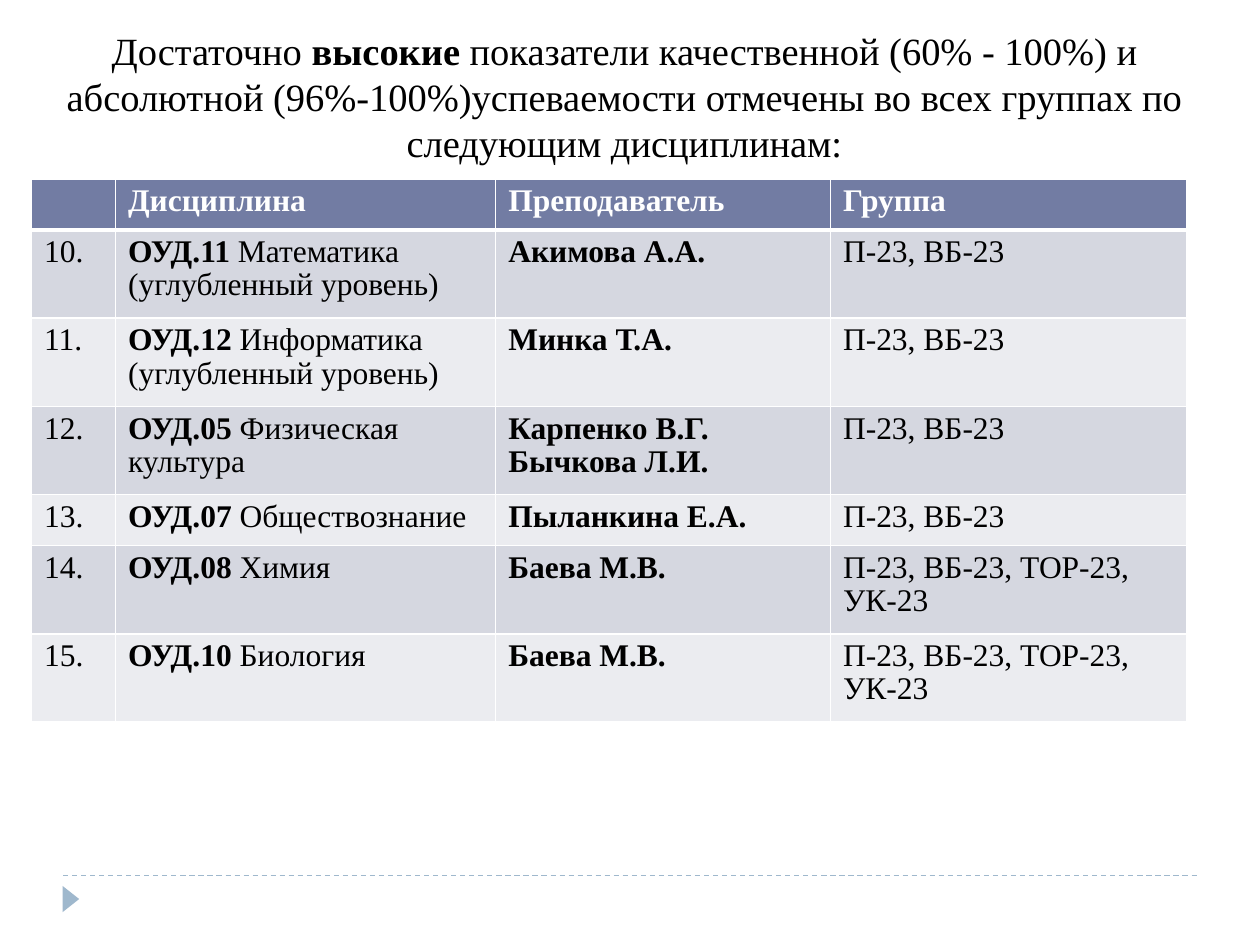
from lxml import etree
from pptx import Presentation
from pptx.dml.color import RGBColor
from pptx.enum.dml import MSO_LINE
from pptx.enum.shapes import MSO_CONNECTOR, MSO_SHAPE
from pptx.enum.text import MSO_ANCHOR, PP_ALIGN
from pptx.oxml.ns import qn
from pptx.util import Pt

CENTER = PP_ALIGN.CENTER
LEFT = PP_ALIGN.LEFT
TOP = MSO_ANCHOR.TOP
DASH = MSO_LINE.DASH
STRAIGHT = MSO_CONNECTOR.STRAIGHT
TRIANGLE = MSO_SHAPE.ISOSCELES_TRIANGLE

FONT = "Times New Roman"
COLORS = {
    "text": "000000",
    "white": "FFFFFF",
    "header": "727CA3",
    "odd": "D5D7E0",
    "even": "EBECF0",
    "accent": "9FB8CD",
}

TITLE = [
    ("Достаточно ", False),
    ("высокие", True),
    (" показатели качественной (60% - 100%) и абсолютной (96%-100%)"
     "успеваемости отмечены во всех группах по следующим дисциплинам:", False),
]
HEADER = ["", "Дисциплина", "Преподаватель", "Группа"]
TWO_GROUPS = "П-23, ВБ-23"
FOUR_GROUPS = "П-23, ВБ-23, ТОР-23, УК-23"
FIRST_NUMBER = 10
# code, discipline, teachers, groups
DISCIPLINES = [
    ("ОУД.11", "Математика (углубленный уровень)", ["Акимова А.А."], TWO_GROUPS),
    ("ОУД.12", "Информатика (углубленный уровень)", ["Минка Т.А."], TWO_GROUPS),
    ("ОУД.05", "Физическая культура", ["Карпенко В.Г.", "Бычкова Л.И."], TWO_GROUPS),
    ("ОУД.07", "Обществознание", ["Пыланкина Е.А."], TWO_GROUPS),
    ("ОУД.08", "Химия", ["Баева М.В."], FOUR_GROUPS),
    ("ОУД.10", "Биология", ["Баева М.В."], FOUR_GROUPS),
]
COLUMN_WIDTHS = [48, 217.3, 191.3, 203.6]
SINGLE, DOUBLE = 29.2, 50.4
ROW_HEIGHTS = [SINGLE, DOUBLE, DOUBLE, DOUBLE, SINGLE, DOUBLE, DOUBLE]


def color(name):
    return RGBColor.from_string(COLORS[name])


def write_text(frame, paragraphs, size=18, fill="text", align=LEFT, spacing=0.95):
    """Write paragraphs, each a list of (text, bold) spans."""
    for index, spans in enumerate(paragraphs):
        para = frame.add_paragraph() if index else frame.paragraphs[0]
        para.alignment = align
        para.line_spacing = spacing
        for text, bold in spans:
            span = para.add_run()
            span.text = text
            span.font.name = FONT
            span.font.size = Pt(size)
            span.font.bold = bold
            span.font.color.rgb = color(fill)


def add_title(page):
    box = page.shapes.add_textbox(Pt(23.8), Pt(12.2), Pt(666), Pt(178))
    frame = box.text_frame
    frame.word_wrap = True
    frame.vertical_anchor = TOP
    write_text(frame, [TITLE], size=22, align=CENTER, spacing=Pt(26.3))


def set_borders(cell, **widths):
    """Draw white cell borders; widths in points by side: L, R, T, B."""
    properties = cell._tc.get_or_add_tcPr()
    for position, (side, width) in enumerate(widths.items()):
        line = etree.Element(qn(f"a:ln{side}"), w=str(Pt(width)))
        fill = etree.SubElement(line, qn("a:solidFill"))
        etree.SubElement(fill, qn("a:srgbClr"), val=COLORS["white"])
        properties.insert(position, line)


def table_rows():
    """Return every row as cells of paragraphs of spans."""
    rows = [[[[(label, True)]] if label else [] for label in HEADER]]
    for number, (code, name, teachers, groups) in enumerate(DISCIPLINES, FIRST_NUMBER):
        rows.append([
            [[(f"{number}.", False)]],
            [[(code, True), (f" {name}", False)]],
            [[(teacher, True)] for teacher in teachers],
            [[(groups, False)]],
        ])
    return rows


def add_discipline_table(page):
    rows = table_rows()
    table = page.shapes.add_table(
        len(rows), len(COLUMN_WIDTHS), Pt(18), Pt(102.2),
        Pt(sum(COLUMN_WIDTHS)), Pt(sum(ROW_HEIGHTS))).table
    for column, width in zip(table.columns, COLUMN_WIDTHS):
        column.width = Pt(width)
    for row_index, (row, height) in enumerate(zip(rows, ROW_HEIGHTS)):
        table.rows[row_index].height = Pt(height)
        is_header = row_index == 0
        band = "header" if is_header else "odd" if row_index % 2 else "even"
        for column_index, paragraphs in enumerate(row):
            cell = table.cell(row_index, column_index)
            cell.fill.solid()
            cell.fill.fore_color.rgb = color(band)
            set_borders(cell, L=1, R=1, T=3 if row_index == 1 else 1,
                        B=3 if is_header else 1)
            write_text(cell.text_frame, paragraphs,
                       fill="white" if is_header else "text")


def add_footer_line(page):
    line = page.shapes.add_connector(STRAIGHT, Pt(36), Pt(500.4), Pt(684), Pt(500.4))
    line.line.color.rgb = color("accent")
    line.line.width = Pt(0.75)
    line.line.dash_style = DASH
    etree.SubElement(line._element.spPr, qn("a:effectLst"))


def add_footer_marker(page):
    marker = page.shapes.add_shape(TRIANGLE, Pt(33), Pt(509), Pt(15), Pt(9.5))
    marker.rotation = 90
    marker.shadow.inherit = False
    marker.fill.solid()
    marker.fill.fore_color.rgb = color("accent")
    marker.line.fill.background()


def main():
    deck = Presentation()
    deck.slide_width, deck.slide_height = Pt(720), Pt(540)
    page = deck.slides.add_slide(deck.slide_layouts[6])
    add_footer_line(page)
    add_footer_marker(page)
    add_title(page)
    add_discipline_table(page)
    deck.save("out.pptx")


if __name__ == "__main__":
    main()
